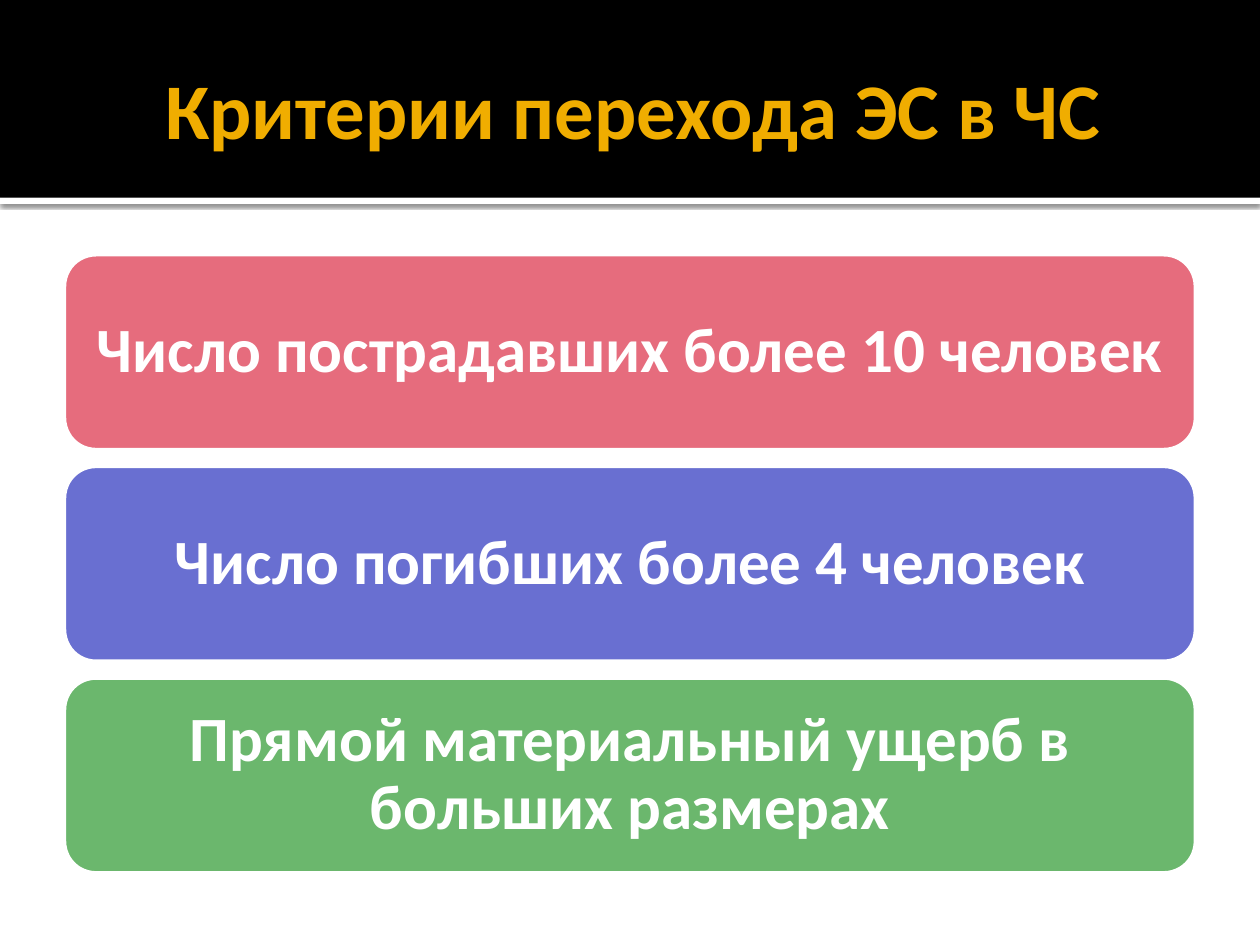
from lxml import etree
from pptx import Presentation
from pptx.dml.color import RGBColor
from pptx.enum.shapes import MSO_SHAPE
from pptx.enum.text import MSO_ANCHOR, PP_ALIGN
from pptx.oxml.ns import qn
from pptx.util import Pt

RECT, ROUNDED = MSO_SHAPE.RECTANGLE, MSO_SHAPE.ROUNDED_RECTANGLE
MIDDLE, CENTER = MSO_ANCHOR.MIDDLE, PP_ALIGN.CENTER

TITLE = "Критерии перехода ЭС в ЧС"
CRITERIA = [
    ("Число пострадавших более 10 человек", "E66C7D"),
    ("Число погибших более 4 человек", "696FD1"),
    ("Прямой материальный ущерб в больших размерах", "6BB76D"),
]

THEME = {
    "font": "Calibri", "title_size": 45, "card_size": 36,
    "title": "F0AD00", "band": "000000", "light": "FFFFFF", "shadow": "000000",
}

SLIDE_W, SLIDE_H = 720, 540
BAND_H, RULE_H = 113, 3.6
MARGIN = 36
CARD_W, CARD_H = SLIDE_W - 2 * MARGIN, 113.1
CARDS_TOP, CARD_PITCH = 144.7, 120.95


def add_block(slide, kind, box, fill, outline=None):
    block = slide.shapes.add_shape(kind, *map(Pt, box))
    block.shadow.inherit = False
    block.fill.solid()
    block.fill.fore_color.rgb = RGBColor.from_string(fill)
    if outline:
        block.line.color.rgb = RGBColor.from_string(outline)
        block.line.width = Pt(3.78)
    else:
        block.line.fill.background()
    return block


def write_text(holder, text, size, color, insets, spacing=None):
    """Insets run left, top, right, bottom."""
    frame = holder.text_frame
    frame.word_wrap = True
    frame.vertical_anchor = MIDDLE
    (frame.margin_left, frame.margin_top,
     frame.margin_right, frame.margin_bottom) = map(Pt, insets)
    paragraph = frame.paragraphs[0]
    paragraph.alignment = CENTER
    paragraph.line_spacing = spacing
    run = paragraph.add_run()
    run.text = text
    run.font.name = THEME["font"]
    run.font.size = Pt(size)
    run.font.bold = True
    run.font.color.rgb = RGBColor.from_string(color)


def cast_shadow(block):
    """Put a soft shadow straight below the block."""
    effects = block._element.spPr.find(qn("a:effectLst"))
    shadow = etree.SubElement(
        effects, qn("a:outerShdw"), blurRad=str(Pt(2.5)), dist=str(Pt(0.8)),
        dir="5400000", algn="tl", rotWithShape="0")
    color = etree.SubElement(shadow, qn("a:srgbClr"), val=THEME["shadow"])
    etree.SubElement(color, qn("a:alpha"), val="60000")


def main():
    deck = Presentation()
    deck.slide_width, deck.slide_height = Pt(SLIDE_W), Pt(SLIDE_H)
    slide = deck.slides.add_slide(deck.slide_layouts[6])

    rule = add_block(slide, RECT, (0, BAND_H, SLIDE_W, RULE_H), THEME["light"])
    cast_shadow(rule)
    add_block(slide, RECT, (0, 0, SLIDE_W, BAND_H), THEME["band"])
    heading = slide.shapes.add_textbox(Pt(MARGIN), Pt(12.2), Pt(CARD_W), Pt(98.6))
    write_text(heading, TITLE, THEME["title_size"], THEME["title"],
               insets=(7.2, 3.6, 3.6, 3.6))

    for row, (criterion, fill) in enumerate(CRITERIA):
        box = (MARGIN, CARDS_TOP + row * CARD_PITCH, CARD_W, CARD_H)
        card = add_block(slide, ROUNDED, box, fill, outline=THEME["light"])
        write_text(card, criterion, THEME["card_size"], THEME["light"],
                   insets=(6, 6, 6, 6), spacing=0.9)

    deck.save("out.pptx")


if __name__ == "__main__":
    main()
